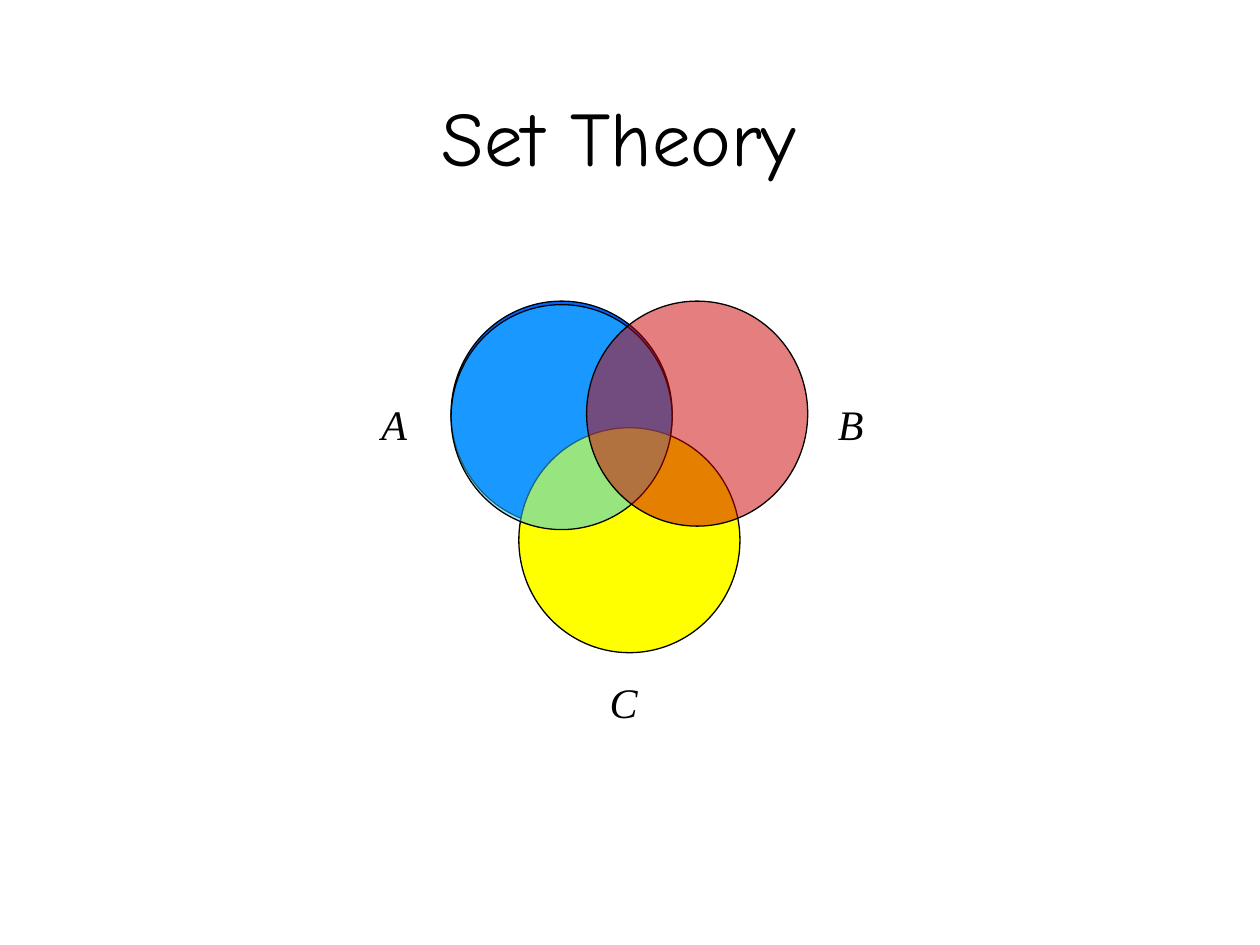
from lxml.etree import SubElement
from pptx import Presentation
from pptx.dml.color import RGBColor
from pptx.enum.shapes import MSO_SHAPE as Shape
from pptx.enum.text import MSO_ANCHOR as Anchor, MSO_AUTO_SIZE as AutoSize, PP_ALIGN as Align
from pptx.oxml.ns import qn
from pptx.util import Inches, Pt

BLACK = "000000"
CIRCLE = (0.62, 0.64)
LABEL = (0.14, 0.18)

# Left and top as shares of the diagram box, back to front
CIRCLES = [
    (0, 0, "0066FF", None),
    (0.19, 0.36, "FFFF00", None),
    (0, 0.01, "33CCFF", 50),
    (0.38, 0, "CC0000", 50),
]
LABELS = [("A", -0.23, 0.26), ("B", 1.05, 0.26), ("C", 0.41, 1.05)]


def rgb(value):
    return RGBColor.from_string(value)


def share(box, left, top, size):
    """Turn shares of a box into a left, top, width, height in EMU."""
    x, y, width, height = box
    return (int(x + left * width), int(y + top * height),
            int(size[0] * width), int(size[1] * height))


def format_text(para, font_name, size, italic=False):
    for span in para.runs:
        span.font.name = font_name
        span.font.size = Pt(size)
        span.font.italic = italic
        span.font.color.rgb = rgb(BLACK)


def set_opacity(shape, percent):
    color = shape.fill._xPr.find(qn("a:solidFill"))[0]
    SubElement(color, qn("a:alpha")).set("val", str(percent * 1000))


def place_title(page, box, text):
    title = page.shapes.title
    title.left, title.top, title.width, title.height = box
    frame = title.text_frame
    frame.text = text
    frame.vertical_anchor = Anchor.MIDDLE
    para = frame.paragraphs[0]
    para.alignment = Align.CENTER
    format_text(para, "Comic Neue", 44)


def add_label(page, box, text):
    frame = page.shapes.add_textbox(*box).text_frame
    frame.text = text
    frame.word_wrap = False
    frame.auto_size = AutoSize.SHAPE_TO_FIT_TEXT
    format_text(frame.paragraphs[0], "Times New Roman", 24, italic=True)


def add_circle(group, box, color, opacity):
    circle = group.shapes.add_shape(Shape.OVAL, *box)
    circle.shadow.inherit = False
    circle.fill.solid()
    circle.fill.fore_color.rgb = rgb(color)
    circle.line.color.rgb = rgb(BLACK)
    circle.line.width = Pt(0.75)
    if opacity:
        set_opacity(circle, opacity)


def add_venn_diagram(page, box):
    for text, left, top in LABELS:
        add_label(page, share(box, left, top, LABEL), text)
    group = page.shapes.add_group_shape()
    for left, top, color, opacity in CIRCLES:
        add_circle(group, share(box, left, top, CIRCLE), color, opacity)


def main():
    deck = Presentation()
    deck.slide_width, deck.slide_height = Inches(10), Inches(7.5)
    page = deck.slides.add_slide(deck.slide_layouts[5])
    place_title(page, [Inches(n) for n in (0.25, 0.58, 9.33, 1)], "Set Theory")
    add_venn_diagram(page, [Inches(n) for n in (3.58, 2.39, 2.83, 2.79)])
    deck.save("out.pptx")


if __name__ == "__main__":
    main()
